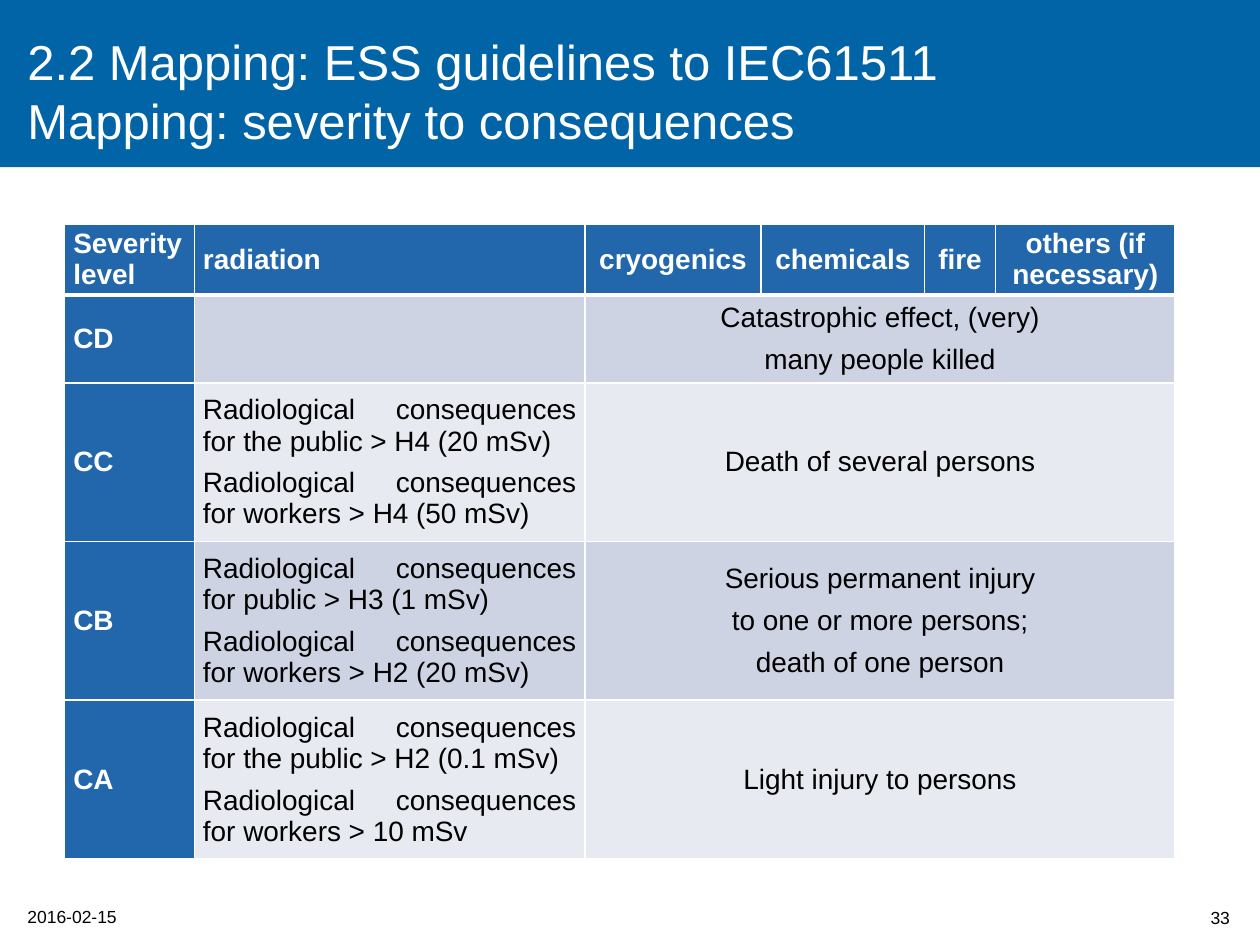
from lxml import etree
from pptx import Presentation
from pptx import util as u
from pptx.dml.color import RGBColor
from pptx.enum import shapes, text
from pptx.oxml.ns import qn

Pt = u.Pt
ALIGN, ANCHOR = text.PP_ALIGN, text.MSO_ANCHOR
WHITE, BLACK = "FFFFFF", "000000"
BANNER, HEADER = "0064A6", "2266AB"
BANDS = ["CDD3E2", "E8EAF1"]

COLUMNS = [74.1, 223.2, 100.7, 93.5, 40.4, 102.8]
ROWS = [40.3, 50.3, 90.7, 90.7, 90.7]
HEADINGS = ["Severity level", "radiation", "cryogenics", "chemicals",
            "fire", "others (if necessary)"]
# Level, radiation consequences, consequences of all other hazards
LEVELS = [
    ("CD", "", "Catastrophic effect, (very)\nmany people killed"),
    ("CC", "Radiological consequences for the public > H4 (20 mSv)\n"
           "Radiological consequences for workers > H4 (50 mSv)",
     "Death of several persons"),
    ("CB", "Radiological consequences for public > H3 (1 mSv)\n"
           "Radiological consequences for workers > H2 (20 mSv)",
     "Serious permanent injury\nto one or more persons;\ndeath of one person"),
    ("CA", "Radiological consequences for the public > H2 (0.1 mSv)\n"
           "Radiological consequences for workers > 10 mSv",
     "Light injury to persons"),
]


def color(value):
    return RGBColor.from_string(value)


def write(frame, words, size, tint, align=ALIGN.LEFT, bold=False):
    frame.word_wrap = True
    frame.text = words
    for index, para in enumerate(frame.paragraphs):
        para.alignment = align
        if index:
            para.space_before = Pt(6)
        font = para.font
        font.name, font.size, font.bold = "Arial", Pt(size), bold
        font.color.rgb = color(tint)
        for span in para.runs:
            span.font.name, span.font.size, span.font.bold = "Arial", Pt(size), bold
            span.font.color.rgb = color(tint)


def add_label(page, box, words, size, tint, align=ALIGN.LEFT, anchor=ANCHOR.MIDDLE):
    frame = page.shapes.add_textbox(*map(Pt, box)).text_frame
    frame.vertical_anchor = anchor
    write(frame, words, size, tint, align)


def add_banner(page, box):
    left, top, width, height = box
    band = page.shapes.add_shape(shapes.MSO_SHAPE.RECTANGLE, *map(Pt, box))
    band.shadow.inherit = False
    band.fill.solid()
    band.fill.fore_color.rgb = color(BANNER)
    band.line.fill.background()
    add_label(page, (left + 8.6, top + 15.1, 544.3, 73.4),
              "2.2 Mapping: ESS guidelines to IEC61511\v"
              "Mapping: severity to consequences", 28, WHITE)


def add_borders(cell, bottom):
    properties = cell._tc.get_or_add_tcPr()
    for side, width in (("L", 1), ("R", 1), ("T", 1), ("B", bottom)):
        line = etree.SubElement(properties, qn("a:ln" + side), w=str(Pt(width)))
        fill = etree.SubElement(line, qn("a:solidFill"))
        etree.SubElement(fill, qn("a:srgbClr"), val=WHITE)


def fill_cell(cell, words, fill, tint, align, bold, bottom=1):
    add_borders(cell, bottom)
    cell.fill.solid()
    cell.fill.fore_color.rgb = color(fill)
    cell.margin_left = cell.margin_right = Pt(5)
    cell.margin_top = cell.margin_bottom = 0
    cell.vertical_anchor = ANCHOR.MIDDLE
    write(cell.text_frame, words, 16, tint, align, bold)


def add_severity_table(page, box):
    table = page.shapes.add_table(len(ROWS), len(COLUMNS), *map(Pt, box)).table
    for column, width in zip(table.columns, COLUMNS):
        column.width = Pt(width)
    for row, height in zip(table.rows, ROWS):
        row.height = Pt(height)

    # Heading row
    for index, heading in enumerate(HEADINGS):
        align = ALIGN.JUSTIFY if index < 2 else ALIGN.CENTER
        fill_cell(table.cell(0, index), heading, HEADER, WHITE, align, True, 3)

    # Severity levels, with one merged cell for the other hazards
    for row, (level, radiation, others) in enumerate(LEVELS, 1):
        band = BANDS[(row - 1) % 2]
        fill_cell(table.cell(row, 0), level, HEADER, WHITE, ALIGN.JUSTIFY, True)
        fill_cell(table.cell(row, 1), radiation, band, BLACK, ALIGN.JUSTIFY, False)
        for column in range(2, len(COLUMNS)):
            fill_cell(table.cell(row, column), others if column == 2 else "",
                      band, BLACK, ALIGN.CENTER, False)
        table.cell(row, 2).merge(table.cell(row, len(COLUMNS) - 1))


def add_footer(page, box):
    left, top, width, height = box
    add_label(page, (left, top + 4.3, 118.8, 19.4), "2016-02-15", 10, BLACK,
              anchor=ANCHOR.TOP)
    add_label(page, (left + width - 51.8, top, 51.8, height), "33", 10, BLACK,
              ALIGN.RIGHT)


def main():
    deck = Presentation()
    deck.slide_width, deck.slide_height = Pt(720), Pt(540)
    page = deck.slides.add_slide(deck.slide_layouts[6])
    add_banner(page, (0, 0, 720, 95.5))
    add_severity_table(page, (36.9, 128.2, sum(COLUMNS), sum(ROWS)))
    add_footer(page, (8.6, 509.8, 701.3, 28.8))
    deck.save("out.pptx")


if __name__ == "__main__":
    main()
